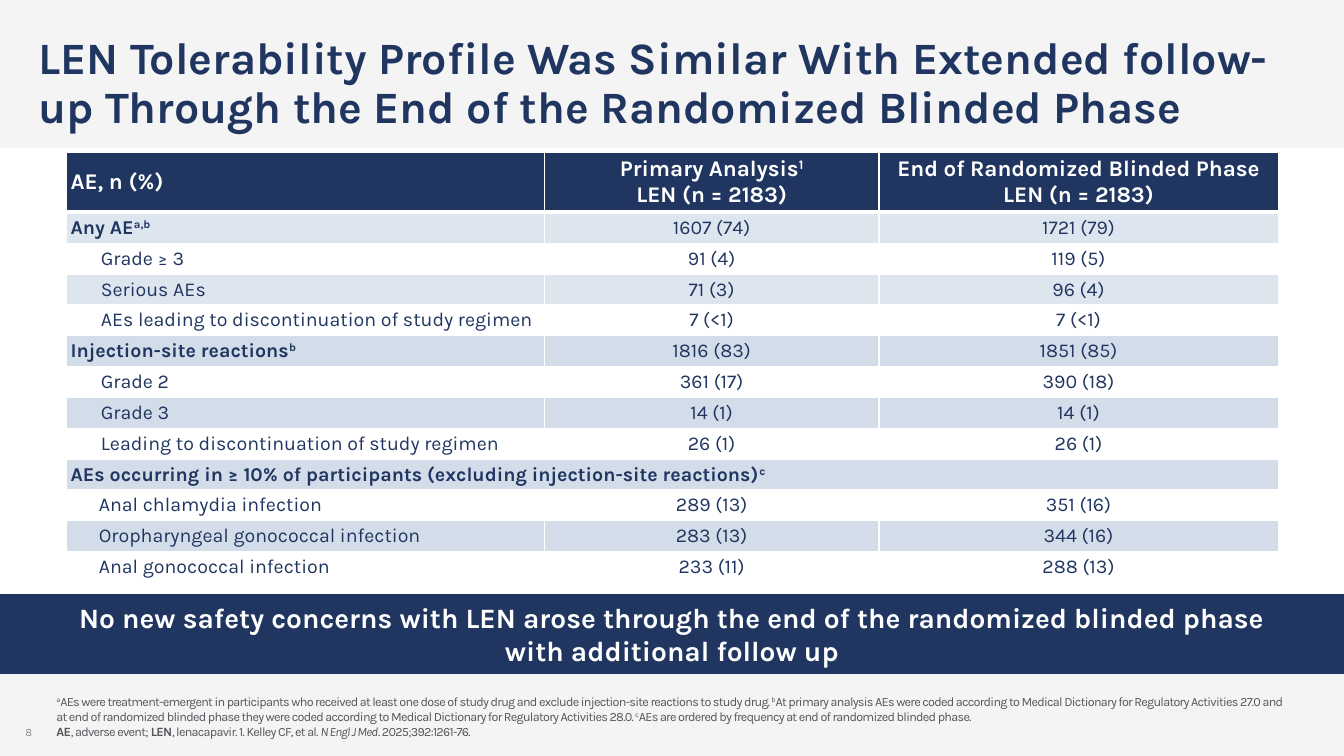
from lxml import etree
from pptx import Presentation
from pptx.dml.color import RGBColor
from pptx.enum.shapes import MSO_SHAPE
from pptx.enum.text import MSO_ANCHOR, MSO_AUTO_SIZE, PP_ALIGN
from pptx.oxml.ns import qn
from pptx.util import Cm, Pt

RECT = MSO_SHAPE.RECTANGLE
LEFT, CENTER = PP_ALIGN.LEFT, PP_ALIGN.CENTER
MIDDLE, BOTTOM = MSO_ANCHOR.MIDDLE, MSO_ANCHOR.BOTTOM
NO_FIT = MSO_AUTO_SIZE.NONE

NAVY = RGBColor(0x20, 0x36, 0x61)
WHITE = RGBColor(0xFF, 0xFF, 0xFF)
PANEL = RGBColor(0xF4, 0xF4, 0xF4)
LIGHT = RGBColor(0xDD, 0xE5, 0xEF)
MID = RGBColor(0xD3, 0xDD, 0xEA)
GREY = RGBColor(0x8A, 0x8B, 0x8D)
SLATE = RGBColor(0x54, 0x56, 0x5B)

FONT = "Karla"
SLIDE_W, SLIDE_H = 33.87, 19.05

TITLE = ("LEN Tolerability Profile Was Similar With Extended follow-up "
         "Through the End of the Randomized Blinded Phase")
BANNER = ("No new safety concerns with LEN arose through the end of the "
          "randomized blinded phase\vwith additional follow up")
FOOTNOTE = [
    ("a", "^"),
    ("AEs were treatment-emergent in participants who received at least one dose of "
     "study drug and exclude injection-site reactions to study drug. ", ""),
    ("b", "^"),
    ("At primary analysis AEs were coded according to Medical Dictionary for Regulatory "
     "Activities 27.0 and at end of randomized blinded phase they were coded according "
     "to Medical Dictionary for Regulatory Activities 28.0. ", ""),
    ("c", "^"),
    ("AEs are ordered by frequency at end of randomized blinded phase.", ""),
    ("\n", ""),
    ("AE", "b"), (", adverse event; ", ""),
    ("LEN", "b"), (", lenacapavir. 1. Kelley CF, et al. ", ""),
    ("N Engl J Med", "i"), (". 2025;392:1261-76.", ""),
]

ARM = [("LEN (n = 2183)", "b")]
HEADER = [
    [[("AE, n (%)", "b")]],
    [[("Primary Analysis", "b"), ("1", "b^")], ARM],
    [[("End of Randomized Blinded Phase", "b")], ARM],
]
SECTIONS = [
    ("Any AE", "a,b", ["1607 (74)", "1721 (79)"], LIGHT, 0.76, [
        ("Grade ≥ 3", "91 (4)", "119 (5)"),
        ("Serious AEs", "71 (3)", "96 (4)"),
        ("AEs leading to discontinuation of study regimen", "7 (<1)", "7 (<1)")]),
    ("Injection-site reactions", "b", ["1816 (83)", "1851 (85)"], MID, 0.76, [
        ("Grade 2", "361 (17)", "390 (18)"),
        ("Grade 3", "14 (1)", "14 (1)"),
        ("Leading to discontinuation of study regimen", "26 (1)", "26 (1)")]),
    ("AEs occurring in ≥ 10% of participants (excluding injection-site reactions)",
     "c", [], MID, 0.71, [
         ("Anal chlamydia infection", "289 (13)", "351 (16)"),
         ("Oropharyngeal gonococcal infection", "283 (13)", "344 (16)"),
         ("Anal gonococcal infection", "233 (11)", "288 (13)")]),
]
COL_WIDTHS = [12.04, 8.43, 10.06]
HEADER_H, ROW_H = 1.27, 0.66


def place(s, left, top, width, height):
    s.left, s.top, s.width, s.height = Cm(left), Cm(top), Cm(width), Cm(height)


def style_font(font, size, color, bold=False, italic=False):
    font.name, font.size, font.bold, font.italic = FONT, Pt(size), bold, italic
    font.color.rgb = color


def format_text(tf, size, color, bold=False, align=LEFT, anchor=MIDDLE):
    tf.word_wrap = True
    tf.auto_size = NO_FIT
    tf.vertical_anchor = anchor
    for p in tf.paragraphs:
        p.alignment = align
        for r in p.runs:
            style_font(r.font, size, color, bold)


def add_runs(p, runs, size, color, spacing=None):
    for text, marks in runs:
        if text == "\n":
            p.add_line_break()
            continue
        r = p.add_run()
        r.text = text
        style_font(r.font, size, color, "b" in marks, "i" in marks)
        rPr = r._r.get_or_add_rPr()
        if "^" in marks:
            rPr.set("baseline", "30000")
        if spacing is not None:
            rPr.set("spc", str(spacing))


def add_rect(slide, top, height, color):
    s = slide.shapes.add_shape(RECT, 0, Cm(top), Cm(SLIDE_W), Cm(height))
    s.shadow.inherit = False
    s.fill.solid()
    s.fill.fore_color.rgb = color
    s.line.fill.background()
    return s


def add_panels(slide):
    tree = slide.shapes._spTree
    for top, height in [(0, 3.73), (16.97, 2.08)]:
        tree.insert(2, add_rect(slide, top, height, PANEL)._element)


def add_title(slide):
    s = slide.shapes.title
    place(s, 0.71, 0.79, 32.44, 2.69)
    s.text_frame.text = TITLE
    format_text(s.text_frame, 32, NAVY, True, anchor=BOTTOM)
    s.text_frame.paragraphs[0].line_spacing = 0.9


def add_footnote(slide):
    s = slide.placeholders[1]
    place(s, 1.42, 17.91, 30.99, 0.84)
    tf = s.text_frame
    tf.margin_left = tf.margin_right = 0
    p = tf.paragraphs[0]
    pPr = p._p.get_or_add_pPr()
    pPr.set("marL", "0")
    pPr.set("indent", "0")
    etree.SubElement(pPr, qn("a:buNone"))
    p.space_before = Pt(0)
    p.alignment = LEFT
    add_runs(p, FOOTNOTE, 9, SLATE, -50)
    tf.word_wrap = True
    tf.auto_size = NO_FIT
    tf.vertical_anchor = BOTTOM


def add_page_number(slide):
    s = slide.shapes.add_textbox(Cm(0.23), Cm(17.73), Cm(0.99), Cm(1.02))
    s.text_frame.text = "8"
    format_text(s.text_frame, 8, GREY, align=CENTER, anchor=BOTTOM)


def add_banner(slide):
    s = add_rect(slide, 15.01, 1.93, NAVY)
    s.line.color.rgb = NAVY
    s.line.width = Pt(2)
    s.text_frame.paragraphs[0].text = BANNER
    format_text(s.text_frame, 20, WHITE, True, CENTER)


def set_borders(cell, bottom):
    tcPr = cell._tc.get_or_add_tcPr()
    for side, width in [("L", 1), ("R", 1), ("T", 1), ("B", bottom)]:
        ln = etree.SubElement(tcPr, qn("a:ln" + side), w=str(Pt(width)))
        fill = etree.SubElement(ln, qn("a:solidFill"))
        etree.SubElement(fill, qn("a:srgbClr"), val=str(WHITE))


def fill_cell(cell, paragraphs, size, color, fill, align, indent=0, bottom=1):
    set_borders(cell, bottom)
    cell.fill.solid()
    cell.fill.fore_color.rgb = fill
    cell.vertical_anchor = MIDDLE
    cell.margin_left = cell.margin_right = Cm(0.1)
    cell.margin_top = cell.margin_bottom = Cm(0.1)
    for i, runs in enumerate(paragraphs):
        p = cell.text_frame.add_paragraph() if i else cell.text_frame.paragraphs[0]
        p.alignment = align
        if indent:
            p._p.get_or_add_pPr().set("marL", str(Cm(indent)))
        add_runs(p, runs, size, color)


def table_rows():
    for name, note, totals, band, indent, items in SECTIONS:
        yield [[(name, "b"), (note, "b^")]] + [[(v, "")] for v in totals], band, 0
        for i, item in enumerate(items):
            yield [[(v, "")] for v in item], band if i % 2 else WHITE, indent


def add_ae_table(slide):
    rows = list(table_rows())
    frame = slide.shapes.add_table(
        len(rows) + 1, len(COL_WIDTHS), Cm(1.68), Cm(3.83),
        Cm(sum(COL_WIDTHS)), Cm(HEADER_H + ROW_H * len(rows)))
    table = frame.table
    table.horz_banding = False
    for column, width in zip(table.columns, COL_WIDTHS):
        column.width = Cm(width)
    for i, row in enumerate(table.rows):
        row.height = Cm(ROW_H if i else HEADER_H)
    for c, paragraphs in enumerate(HEADER):
        fill_cell(table.cell(0, c), paragraphs, 16, WHITE, NAVY,
                  CENTER if c else LEFT, bottom=3)
    for i, (cells, fill, indent) in enumerate(rows, 1):
        if len(cells) == 1:
            table.cell(i, 0).merge(table.cell(i, len(COL_WIDTHS) - 1))
        for c, runs in enumerate(cells):
            fill_cell(table.cell(i, c), [runs], 14, NAVY, fill,
                      CENTER if c else LEFT, 0 if c else indent)


def main():
    prs = Presentation()
    prs.slide_width, prs.slide_height = Cm(SLIDE_W), Cm(SLIDE_H)
    slide = prs.slides.add_slide(prs.slide_layouts[1])
    add_panels(slide)
    add_page_number(slide)
    add_title(slide)
    add_footnote(slide)
    add_ae_table(slide)
    add_banner(slide)
    prs.save("out.pptx")


if __name__ == "__main__":
    main()
